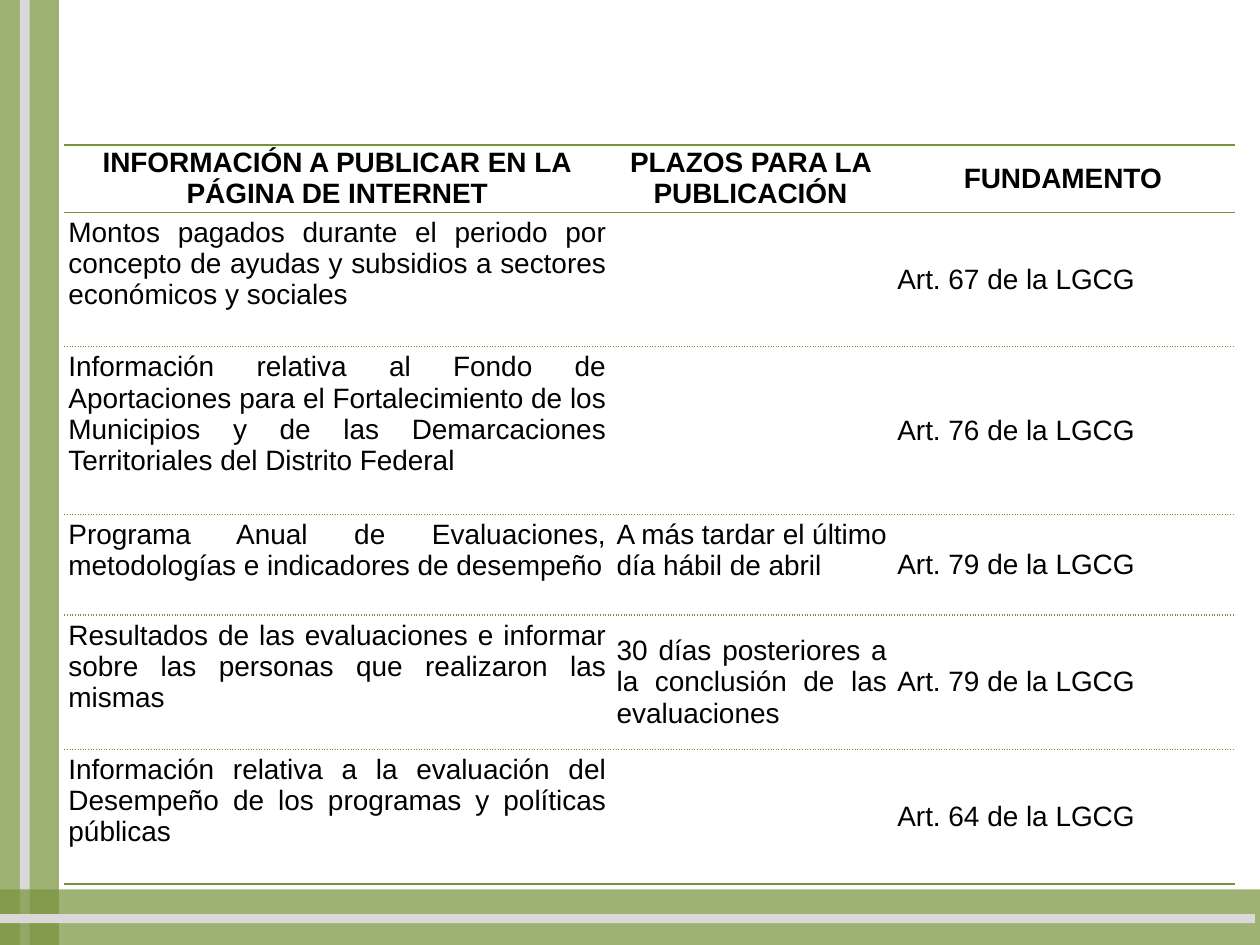
from lxml.etree import SubElement
from pptx import Presentation
from pptx.dml.color import RGBColor
from pptx.enum.shapes import MSO_SHAPE
from pptx.enum.text import MSO_ANCHOR, PP_ALIGN
from pptx.oxml.ns import qn
from pptx.util import Cm, Pt

COLORS = {"band": "77933C", "stripe": "D9D9D9", "rule": "76923C", "text": "000000"}
FONT = "Arial"
BAND_ALPHA = 71

# left, top, width, height in cm, color, opacity in percent
BARS = [
    (0, 0, 1.19, 19.05, "band", BAND_ALPHA),
    (0.4, 0, 0.2, 19.05, "stripe", 100),
    (0, 17.93, 25.4, 1.12, "band", BAND_ALPHA),
    (0, 18.43, 25.3, 0.18, "stripe", 100),
]

ROWS = [
    ("INFORMACIÓN A PUBLICAR EN LA\nPÁGINA DE INTERNET", "PLAZOS PARA LA PUBLICACIÓN", "FUNDAMENTO"),
    ("Montos pagados durante el periodo por concepto de ayudas y subsidios a sectores "
     "económicos y sociales", "", "Art. 67 de la LGCG"),
    ("Información relativa al Fondo de Aportaciones para el Fortalecimiento de los Municipios "
     "y de las Demarcaciones Territoriales del Distrito Federal", "", "Art. 76 de la LGCG"),
    ("Programa Anual de Evaluaciones, metodologías e indicadores de desempeño",
     "A más tardar el último día hábil de abril", "Art. 79 de la LGCG"),
    ("Resultados de las evaluaciones e informar sobre las personas que realizaron las mismas",
     "30 días posteriores a la conclusión de las evaluaciones", "Art. 79 de la LGCG"),
    ("Información relativa a la evaluación del Desempeño de los programas y políticas públicas",
     "", "Art. 64 de la LGCG"),
]
COLUMN_WIDTHS = [11, 5.66, 6.93]
ROW_HEIGHTS = [1.36, 2.71, 3.38, 2.03, 2.71, 2.71]
TABLE_LEFT, TABLE_TOP = 1.3, 2.92
TOP_ANCHORED = {(3, 1)}  # deadline that starts level with its description


def add_bar(slide, left, top, width, height, color, opacity):
    bar = slide.shapes.add_shape(MSO_SHAPE.RECTANGLE, Cm(left), Cm(top), Cm(width), Cm(height))
    bar.shadow.inherit = False
    bar.line.fill.background()
    bar.fill.solid()
    bar.fill.fore_color.rgb = RGBColor.from_string(COLORS[color])
    if opacity < 100:
        tint = bar.fill._xPr.find(".//" + qn("a:srgbClr"))
        SubElement(tint, qn("a:alpha"), val=str(opacity * 1000))


def set_borders(cell, top, bottom):
    """Draw top and bottom rules with the given dash styles and hide the side rules."""
    properties = cell._tc.get_or_add_tcPr()
    for side, dash in (("L", None), ("R", None), ("T", top), ("B", bottom)):
        line = SubElement(properties, qn(f"a:ln{side}"), w=str(Pt(1)))
        if dash is None:
            SubElement(line, qn("a:noFill"))
            continue
        fill = SubElement(line, qn("a:solidFill"))
        SubElement(fill, qn("a:srgbClr"), val=COLORS["rule"])
        SubElement(line, qn("a:prstDash"), val=dash)


def write_cell(cell, text, *, bold, align, anchor, indent, top_margin):
    cell.margin_left = cell.margin_right = Cm(0.08)
    cell.margin_top, cell.margin_bottom = Cm(top_margin), 0
    cell.vertical_anchor = anchor
    cell.text_frame.text = text
    for paragraph in cell.text_frame.paragraphs:
        paragraph.alignment = align
        if indent:
            paragraph._p.get_or_add_pPr().set("marL", str(Cm(indent)))
        font = paragraph.font
        font.name, font.size, font.bold = FONT, Pt(16), bold
        font.color.rgb = RGBColor.from_string(COLORS["text"])
        for run in paragraph.runs:
            run.font.name, run.font.size, run.font.bold = FONT, Pt(16), bold
            run.font.color.rgb = RGBColor.from_string(COLORS["text"])


def add_schedule(slide):
    table = slide.shapes.add_table(
        len(ROWS), len(COLUMN_WIDTHS), Cm(TABLE_LEFT), Cm(TABLE_TOP),
        Cm(sum(COLUMN_WIDTHS)), Cm(sum(ROW_HEIGHTS))).table
    table.first_row = table.horz_banding = False
    for column, width in zip(table.columns, COLUMN_WIDTHS):
        column.width = Cm(width)
    for row, height in zip(table.rows, ROW_HEIGHTS):
        row.height = Cm(height)

    last = len(ROWS) - 1
    for r, texts in enumerate(ROWS):
        header = r == 0
        for c, text in enumerate(texts):
            cell = table.cell(r, c)
            at_top = not header and (c == 0 or (r, c) in TOP_ANCHORED)
            write_cell(cell, text, bold=header,
                       align=PP_ALIGN.CENTER if header else PP_ALIGN.JUSTIFY,
                       anchor=MSO_ANCHOR.TOP if at_top else MSO_ANCHOR.MIDDLE,
                       indent=0 if header or c == 0 else 0.05,
                       top_margin=0.1 if at_top else 0)
            set_borders(cell, "solid" if r <= 1 else "sysDot",
                        "solid" if r in (0, last) else "sysDot")
            cell.fill.background()


def main():
    presentation = Presentation()
    presentation.slide_width, presentation.slide_height = Cm(25.4), Cm(19.05)
    slide = presentation.slides.add_slide(presentation.slide_layouts[6])
    for bar in BARS:
        add_bar(slide, *bar)
    add_schedule(slide)
    presentation.save("out.pptx")


if __name__ == "__main__":
    main()
